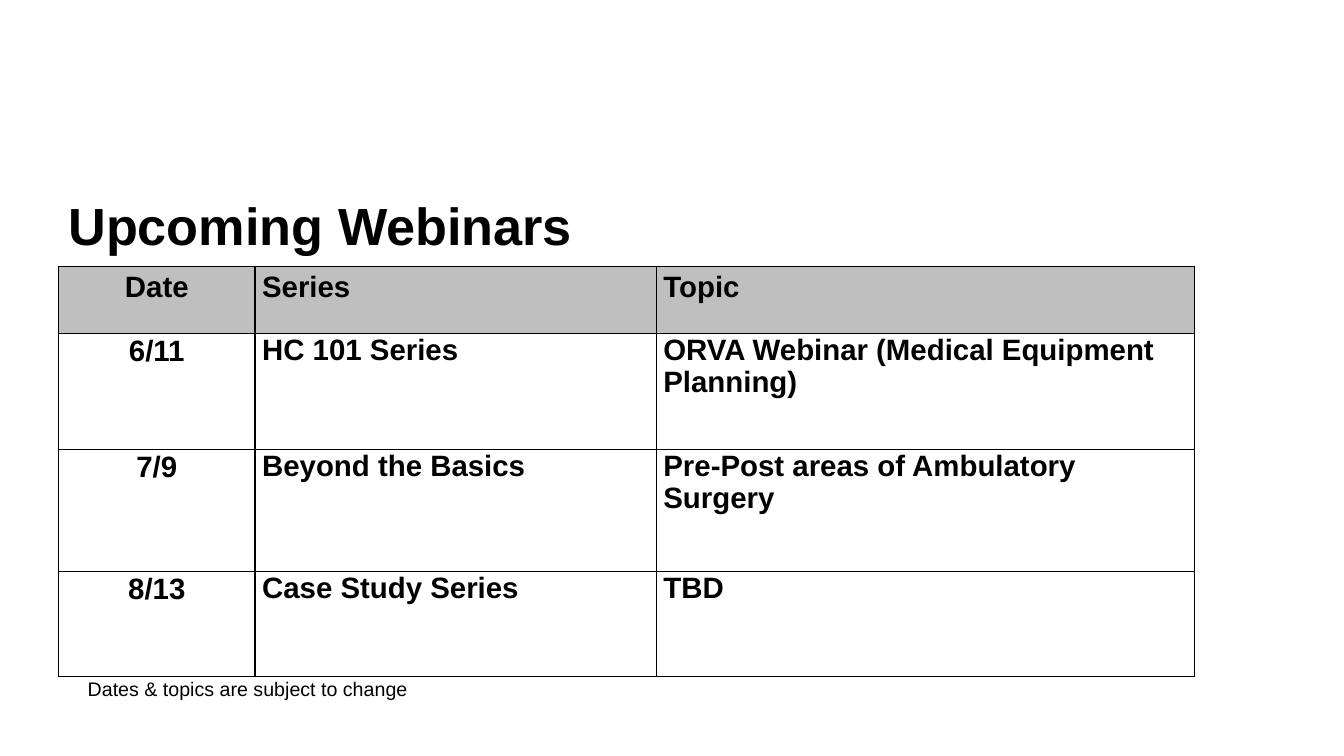
from dataclasses import dataclass
from lxml import etree
from pptx import Presentation, util as u
from pptx.dml.color import RGBColor
from pptx.enum import text
from pptx.oxml.ns import qn

HEADING = "Upcoming Webinars"
SCHEDULE = [
    ("Date", "Series", "Topic"),
    ("6/11", "HC 101 Series", "ORVA Webinar (Medical Equipment Planning)"),
    ("7/9", "Beyond the Basics", "Pre-Post areas of Ambulatory Surgery"),
    ("8/13", "Case Study Series", "TBD"),
]
FOOTNOTE = "Dates & topics are subject to change"

SLIDE_SIZE = (13.33, 7.5)
COLUMNS = (1.95, 3.98, 5.34)
ROWS = (0.67, 1.15, 1.21, 1.04)
LEFT, TABLE_TOP = 0.58, 2.64


@dataclass(frozen=True)
class Theme:
    font: str = "Arial"
    ink: str = "000000"
    header: str = "BFBFBF"
    heading_size: float = 37.3
    cell_size: float = 21
    note_size: float = 14
    border: float = 1


THEME = Theme()


def style(paragraph, size, bold=False):
    font = paragraph.font
    font.name, font.size, font.bold = THEME.font, u.Pt(size), bold
    font.color.rgb = RGBColor.from_string(THEME.ink)


def add_label(slide, box, words, size, bold=False):
    frame = slide.shapes.add_textbox(*map(u.Inches, box)).text_frame
    frame.word_wrap = True
    frame.text = words
    style(frame.paragraphs[0], size, bold)
    return frame


def set_margins(cell, left, top, right, bottom):
    cell.margin_left, cell.margin_top = u.Inches(left), u.Inches(top)
    cell.margin_right, cell.margin_bottom = u.Inches(right), u.Inches(bottom)


def add_borders(cell):
    properties = cell._tc.get_or_add_tcPr()
    for position, side in enumerate(("a:lnL", "a:lnR", "a:lnT", "a:lnB")):
        line = etree.Element(qn(side), w=str(u.Pt(THEME.border)))
        fill = etree.SubElement(line, qn("a:solidFill"))
        etree.SubElement(fill, qn("a:srgbClr"), val=THEME.ink)
        properties.insert(position, line)


def fill_cell(cell, words, is_header, is_date):
    cell.text = words
    paragraph = cell.text_frame.paragraphs[0]
    style(paragraph, THEME.cell_size, True)
    if is_date:
        paragraph.alignment = text.PP_ALIGN.CENTER
    if is_header:
        paragraph.line_spacing = 1.15
        cell.fill.solid()
        cell.fill.fore_color.rgb = RGBColor.from_string(THEME.header)
    else:
        cell.fill.background()
    if is_date and not is_header:
        set_margins(cell, 0.01, 0.01, 0.01, 0)
    else:
        set_margins(cell, 0.07, 0, 0.07, 0)
    add_borders(cell)


def add_schedule(slide):
    box = map(u.Inches, (LEFT, TABLE_TOP, sum(COLUMNS), sum(ROWS)))
    schedule = slide.shapes.add_table(len(ROWS), len(COLUMNS), *box).table
    schedule.first_row = schedule.horz_banding = False
    for column, width in zip(schedule.columns, COLUMNS):
        column.width = u.Inches(width)
    for row, height in zip(schedule.rows, ROWS):
        row.height = u.Inches(height)
    for r, webinar in enumerate(SCHEDULE):
        for c, words in enumerate(webinar):
            fill_cell(schedule.cell(r, c), words, r == 0, c == 0)


def main():
    deck = Presentation()
    deck.slide_width, deck.slide_height = map(u.Inches, SLIDE_SIZE)
    slide = deck.slides.add_slide(deck.slide_layouts[6])
    heading = add_label(slide, (LEFT, 1.73, 5.77, 0.99), HEADING, THEME.heading_size, True)
    heading.vertical_anchor = text.MSO_ANCHOR.MIDDLE
    add_schedule(slide)
    footnote = add_label(slide, (0.66, 6.67, 5.49, 0.34), FOOTNOTE, THEME.note_size)
    footnote.margin_left = u.Inches(0.21)
    deck.save("out.pptx")


if __name__ == "__main__":
    main()
